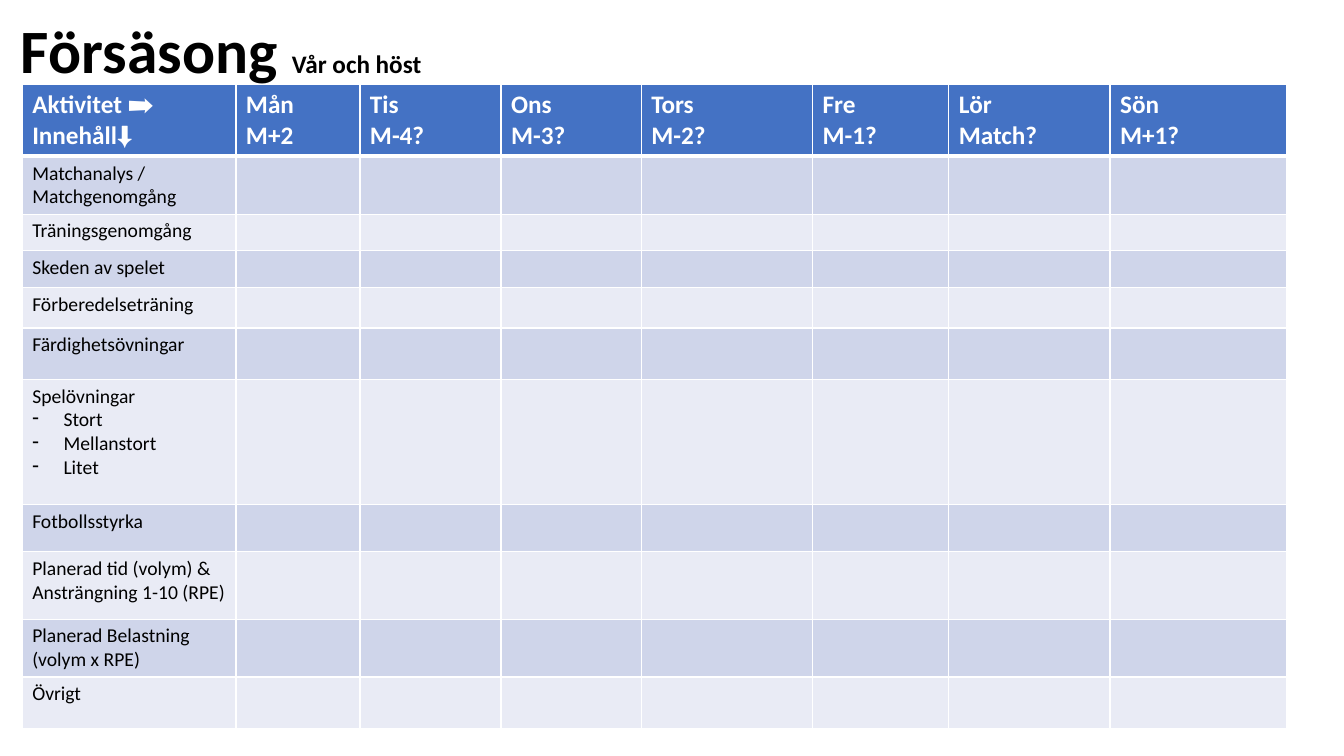
from lxml import etree
from pptx import Presentation
from pptx.dml.color import RGBColor
from pptx.enum.text import MSO_AUTO_SIZE
from pptx.oxml.ns import qn
from pptx.util import Inches, Pt

FIT_SHAPE = MSO_AUTO_SIZE.SHAPE_TO_FIT_TEXT
FONT = "Calibri"
BLACK, WHITE = "000000", "FFFFFF"
HEADER_FILL = "4472C4"
BAND_FILLS = ("E9EBF5", "CFD5EA")
BULLET = "- "

COLUMN_WIDTHS = (2.12, 1.23, 1.4, 1.39, 1.7, 1.35, 1.6, 1.75)
HEADERS = (
    ("Aktivitet ➡️", "Innehåll⬇️"),
    ("Mån", "M+2"),
    ("Tis", "M-4?"),
    ("Ons", "M-3?"),
    ("Tors", "M-2?"),
    ("Fre", "M-1?"),
    ("Lör", "Match?"),
    ("Sön", "M+1?"),
)
HEADER_HEIGHT = 0.7
ACTIVITIES = (
    (0.57, ("Matchanalys / Matchgenomgång",)),
    (0.36, ("Träningsgenomgång",)),
    (0.37, ("Skeden av spelet",)),
    (0.4, ("Förberedelseträning",)),
    (0.51, ("Färdighetsövningar",)),
    (1.24, ("Spelövningar", "- Stort", "- Mellanstort", "- Litet")),
    (0.47, ("Fotbollsstyrka",)),
    (0.67, ("Planerad tid (volym) & Ansträngning 1-10 (RPE)",)),
    (0.57, ("Planerad Belastning (volym x RPE)",)),
    (0.51, ("Övrigt",)),
)


def color(hex_string):
    return RGBColor.from_string(hex_string)


def add_run(paragraph, text, size, hex_color, bold):
    run = paragraph.add_run()
    run.text = text
    run.font.name = FONT
    run.font.size = Pt(size)
    run.font.bold = bold
    run.font.color.rgb = color(hex_color)


def add_dash_bullet(paragraph):
    properties = paragraph._p.get_or_add_pPr()
    properties.set("marL", str(Inches(0.31)))
    properties.set("indent", str(-Inches(0.31)))
    etree.SubElement(properties, qn("a:buChar")).set("char", BULLET.strip())


def set_borders(cell, top, bottom):
    """Draw white cell borders; top and bottom are widths in points."""
    properties = cell._tc.get_or_add_tcPr()
    for side, width in (("L", 1), ("R", 1), ("T", top), ("B", bottom)):
        line = etree.SubElement(properties, qn(f"a:ln{side}"), w=str(Pt(width)))
        fill = etree.SubElement(line, qn("a:solidFill"))
        etree.SubElement(fill, qn("a:srgbClr"), val=WHITE)


def fill_cell(cell, lines, size, hex_color, bold):
    frame = cell.text_frame
    for index, text in enumerate(lines):
        paragraph = frame.add_paragraph() if index else frame.paragraphs[0]
        if text.startswith(BULLET):
            add_dash_bullet(paragraph)
        add_run(paragraph, text.removeprefix(BULLET), size, hex_color, bold)
    if not lines:
        # Keeps empty cells from stretching the low rows
        etree.SubElement(frame.paragraphs[0]._p, qn("a:endParaRPr"), sz=str(size * 100))


def add_title(slide, left, top, width, height):
    box = slide.shapes.add_textbox(Inches(left), Inches(top), Inches(width), Inches(height))
    frame = box.text_frame
    frame.word_wrap = True
    frame.auto_size = FIT_SHAPE
    paragraph = frame.paragraphs[0]
    add_run(paragraph, "Försäsong ", 44, BLACK, True)
    add_run(paragraph, "Vår och höst", 18, BLACK, True)


def add_week_plan(slide, left, top):
    heights = [HEADER_HEIGHT] + [height for height, _ in ACTIVITIES]
    table = slide.shapes.add_table(
        len(heights), len(COLUMN_WIDTHS), Inches(left), Inches(top),
        Inches(sum(COLUMN_WIDTHS)), Inches(sum(heights)),
    ).table
    for column, width in zip(table.columns, COLUMN_WIDTHS):
        column.width = Inches(width)
    for row, height in zip(table.rows, heights):
        row.height = Inches(height)

    for column_index, lines in enumerate(HEADERS):
        cell = table.cell(0, column_index)
        set_borders(cell, 1, 3)
        cell.fill.solid()
        cell.fill.fore_color.rgb = color(HEADER_FILL)
        fill_cell(cell, lines, 18, WHITE, True)

    for row_index, (_, lines) in enumerate(ACTIVITIES, start=1):
        for column_index in range(len(COLUMN_WIDTHS)):
            cell = table.cell(row_index, column_index)
            set_borders(cell, 3 if row_index == 1 else 1, 1)
            cell.fill.solid()
            cell.fill.fore_color.rgb = color(BAND_FILLS[row_index % 2])
            fill_cell(cell, () if column_index else lines, 14, BLACK, False)


def main():
    presentation = Presentation()
    presentation.slide_width = Inches(13.33)
    presentation.slide_height = Inches(7.5)
    slide = presentation.slides.add_slide(presentation.slide_layouts[6])
    add_week_plan(slide, 0.22, 0.84)
    add_title(slide, 0.11, 0.07, 6.67, 0.84)
    presentation.save("out.pptx")


if __name__ == "__main__":
    main()
